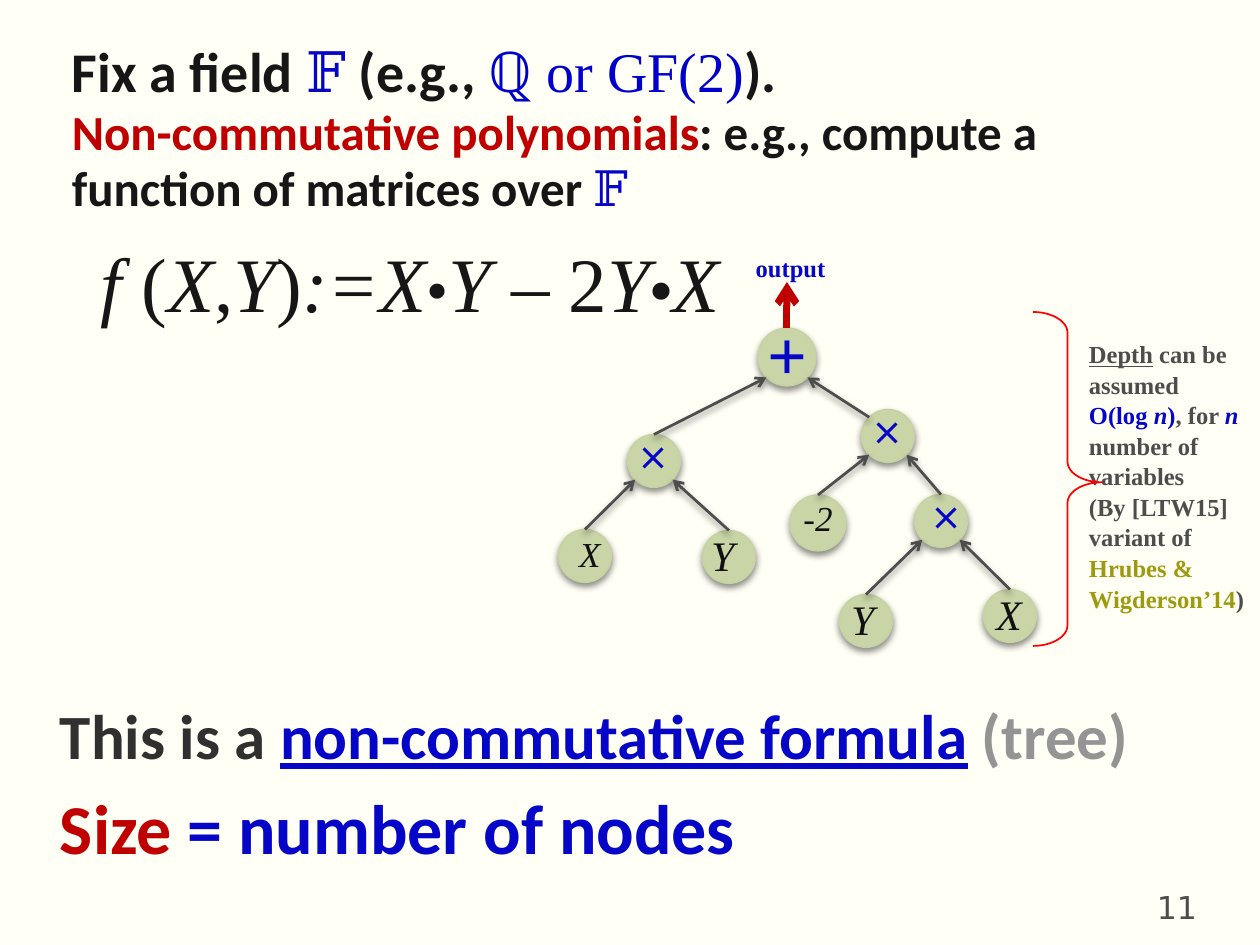
import math

from lxml import etree
from pptx import Presentation
from pptx import util as u
from pptx.dml.color import RGBColor
from pptx.enum import shapes, text
from pptx.oxml import ns

PX = 914400 // 126
COLOURS = {
    "background": "FFFFF6", "ink": "161616", "label": "111111", "dark": "303030",
    "grey": "4D4D4D", "pale": "949494", "blue": "0606C8", "strong": "0000CC",
    "red": "C00000", "brace": "FF0000", "olive": "9D9A0D",
    "node": "C9D5A7", "rim": "C6D2A1", "black": "000000",
}
SERIF, SANS = "Times New Roman", "Calibri"
ITALIC = {"italic": True}
FIELD = {"name": SERIF, "bold": False, "colour": "blue"}
DOT = {"size": 36}

TEXTS = [
    {"at": (72, 48, 1111, 168), "font": {"name": SANS, "size": 32, "bold": True, "colour": "ink"},
     "format": {"line_spacing": u.Pt(32)},
     "paragraphs": [
         [("Fix a field ", {}), ("𝔽", FIELD), (" (e.g., ", {}),
          ("ℚ or GF(2)", {**FIELD, "colour": "strong"}), (").", {})],
         [("Non-commutative polynomials", {"size": 28, "colour": "red"}),
          (": e.g., compute a function of matrices over ", {"size": 28}),
          ("𝔽", {**FIELD, "size": 28})]]},
    {"at": (101, 272, 640, 56), "font": {"name": SERIF, "size": 44, "colour": "ink"},
     "format": {"line_spacing": u.Pt(32)},
     "paragraphs": [
         [("f ", ITALIC), ("(", {}), ("X", ITALIC), (",", {}), ("Y", ITALIC), (")", {}),
          (":=X", ITALIC), ("•", DOT), ("Y ", ITALIC), ("– 2", {}), ("Y", ITALIC),
          ("•", {**DOT, "bold": True}), ("X", ITALIC)]]},
    {"at": (60, 697, 1123, 176), "font": {"name": SANS, "size": 36, "bold": True, "colour": "blue"},
     "gap": 7,
     "paragraphs": [
         [("This is a ", {"colour": "dark"}), ("non-commutative formula", {"underline": True}),
          (" ", {}), ("(tree)", {"colour": "pale"})],
         [("Size ", {"size": 40, "colour": "red"}), ("= number of nodes", {"size": 40})]]},
    {"at": (717, 253, 147, 30), "font": {"name": SERIF, "size": 14, "bold": True, "colour": "blue"},
     "format": {"alignment": text.PP_ALIGN.CENTER},
     "paragraphs": [[("output", {})]]},
    {"at": (1089, 338, 170, 302), "font": {"name": SERIF, "size": 14, "bold": True, "colour": "grey"},
     "format": {"line_spacing": 1.04},
     "paragraphs": [
         [("Depth", {"underline": True}), (" can be assumed", {})],
         [("O(log ", {"colour": "blue"}), ("n", {"italic": True, "colour": "blue"}),
          (")", {"colour": "blue"}), (", for ", {}), ("n", {"italic": True, "colour": "blue"}),
          (" number of variables", {})],
         [("(By [LTW15] variant of ", {}), ("Hrubes & Wigderson’14", {"colour": "olive"}),
          (")", {})]]},
    {"at": (1157, 888, 60, 40), "font": {"name": "DejaVu Sans", "size": 18, "colour": "grey"},
     "paragraphs": [[("11", {})]]},
]

TIMES = {"size": 36, "colour": "blue"}
LEAF = {"size": 24, "colour": "label", "italic": True}
SMALL = {**LEAF, "size": 20}
NODES = {
    "sum": (787, 357, 58, "+", {"size": 40, "bold": True, "colour": "blue"}, (0, 0, 0, 0)),
    "left": (654, 461, 53, "˟", TIMES, (0, 25, 0, 6)),
    "right": (888, 436, 53, "˟", TIMES, (0, 25, 0, 6)),
    "inner": (941, 521, 53, "˟", TIMES, (12, 25, 0, 6)),
    "x1": (585, 556, 53, "X", SMALL, (10, 0, 0, 0)),
    "y1": (729, 557, 53, "Y", LEAF, (0, 0, 12, 0)),
    "minus two": (818, 523, 56, "-2", SMALL, (0, 0, 0, 6)),
    "y2": (866, 621, 53, "Y", LEAF, (0, 0, 6, 0)),
    "x2": (1010, 616, 53, "X", LEAF, (0, 0, 2, 0)),
}
EDGES = [
    ("left", "sum", "top"), ("right", "sum", "corner"),
    ("x1", "left", "top"), ("y1", "left", "top"),
    ("minus two", "right", "top"), ("inner", "right", "top"),
    ("y2", "inner", "top"), ("x2", "inner", "top"),
]
BRACE = (1033, 312, 69, 334)


def px(values):
    return [round(value * PX) for value in values]


def colour(name):
    return RGBColor.from_string(COLOURS[name])


def add_run(paragraph, words, font):
    run = paragraph.add_run()
    run.text = words
    for key, value in font.items():
        if key == "colour":
            run.font.color.rgb = colour(value)
        else:
            setattr(run.font, key, u.Pt(value) if key == "size" else value)


def set_frame(frame, insets, **formats):
    sides = ("left", "top", "right", "bottom")
    formats.update({f"margin_{side}": inset for side, inset in zip(sides, px(insets))})
    for key, value in formats.items():
        setattr(frame, key, value)


def add_text(slide, item):
    frame = slide.shapes.add_textbox(*px(item["at"])).text_frame
    set_frame(frame, (0, 0, 0, 0), word_wrap=True)
    for index, runs in enumerate(item["paragraphs"]):
        paragraph = frame.add_paragraph() if index else frame.paragraphs[0]
        for key, value in item.get("format", {}).items():
            setattr(paragraph, key, value)
        if index and "gap" in item:
            paragraph.space_before = u.Pt(item["gap"])
        for words, changes in runs:
            add_run(paragraph, words, {**item["font"], **changes})


def add_effects(shape, shadow=True):
    effects = etree.SubElement(shape._element.spPr, ns.qn("a:effectLst"))
    if shadow:
        outer = etree.SubElement(effects, ns.qn("a:outerShdw"), blurRad=str(u.Pt(4)),
                                 dist=str(u.Pt(2)), dir="5400000", rotWithShape="0")
        black = etree.SubElement(outer, ns.qn("a:srgbClr"), val=COLOURS["black"])
        etree.SubElement(black, ns.qn("a:alpha"), val="45000")


def add_node(slide, x, y, size, label, font, insets):
    shape = slide.shapes.add_shape(shapes.MSO_SHAPE.OVAL,
                                   *px((x - size / 2, y - size / 2, size, size)))
    shape.fill.solid()
    shape.fill.fore_color.rgb = colour("node")
    shape.line.color.rgb = colour("rim")
    shape.line.width = u.Pt(0.75)
    add_effects(shape)
    set_frame(shape.text_frame, insets, word_wrap=False,
              vertical_anchor=text.MSO_ANCHOR.MIDDLE)
    paragraph = shape.text_frame.paragraphs[0]
    paragraph.alignment = text.PP_ALIGN.CENTER
    paragraph.line_spacing = 0.95
    add_run(paragraph, label, {"name": SERIF, **font})
    return shape


def add_arrow(slide, start, end, name, width, shadow=True):
    arrow = slide.shapes.add_connector(shapes.MSO_CONNECTOR.STRAIGHT, *px(start + end))
    arrow.line.color.rgb = colour(name)
    arrow.line.width = u.Pt(width)
    etree.SubElement(arrow.line._get_or_add_ln(), ns.qn("a:tailEnd"), type="arrow")
    add_effects(arrow, shadow)
    return arrow


def corner(node, right, down):
    x, y, size = NODES[node][:3]
    reach = size / 2 * math.sqrt(0.5)
    return x + right * reach, y + down * reach


def top(node):
    x, y, size = NODES[node][:3]
    return x, y - size / 2


def main():
    presentation = Presentation()
    presentation.slide_width, presentation.slide_height = px((1260, 945))
    slide = presentation.slides.add_slide(presentation.slide_layouts[6])
    slide.background.fill.solid()
    slide.background.fill.fore_color.rgb = colour("background")

    for item in TEXTS:
        add_text(slide, item)

    circles = {name: add_node(slide, *node) for name, node in NODES.items()}
    for child, parent, site in EDGES:
        side = 1 if NODES[child][0] > NODES[parent][0] else -1
        start = top(child) if site == "top" else corner(child, -side, -1)
        edge = add_arrow(slide, start, corner(parent, side, 1), "grey", 1.57)
        if site == "top":
            edge.begin_connect(circles[child], 0)

    x, y = top("sum")
    output = add_arrow(slide, (x, y), (x, 282), "red", 4, shadow=False)
    output.begin_connect(circles["sum"], 0)

    brace = slide.shapes.add_shape(shapes.MSO_SHAPE.RIGHT_BRACE, *px(BRACE))
    brace.shadow.inherit = False
    brace.fill.background()
    brace.line.color.rgb = colour("brace")
    brace.line.width = u.Pt(1)
    brace.adjustments[0], brace.adjustments[1] = 0.3, 0.51

    presentation.save("out.pptx")


if __name__ == "__main__":
    main()
